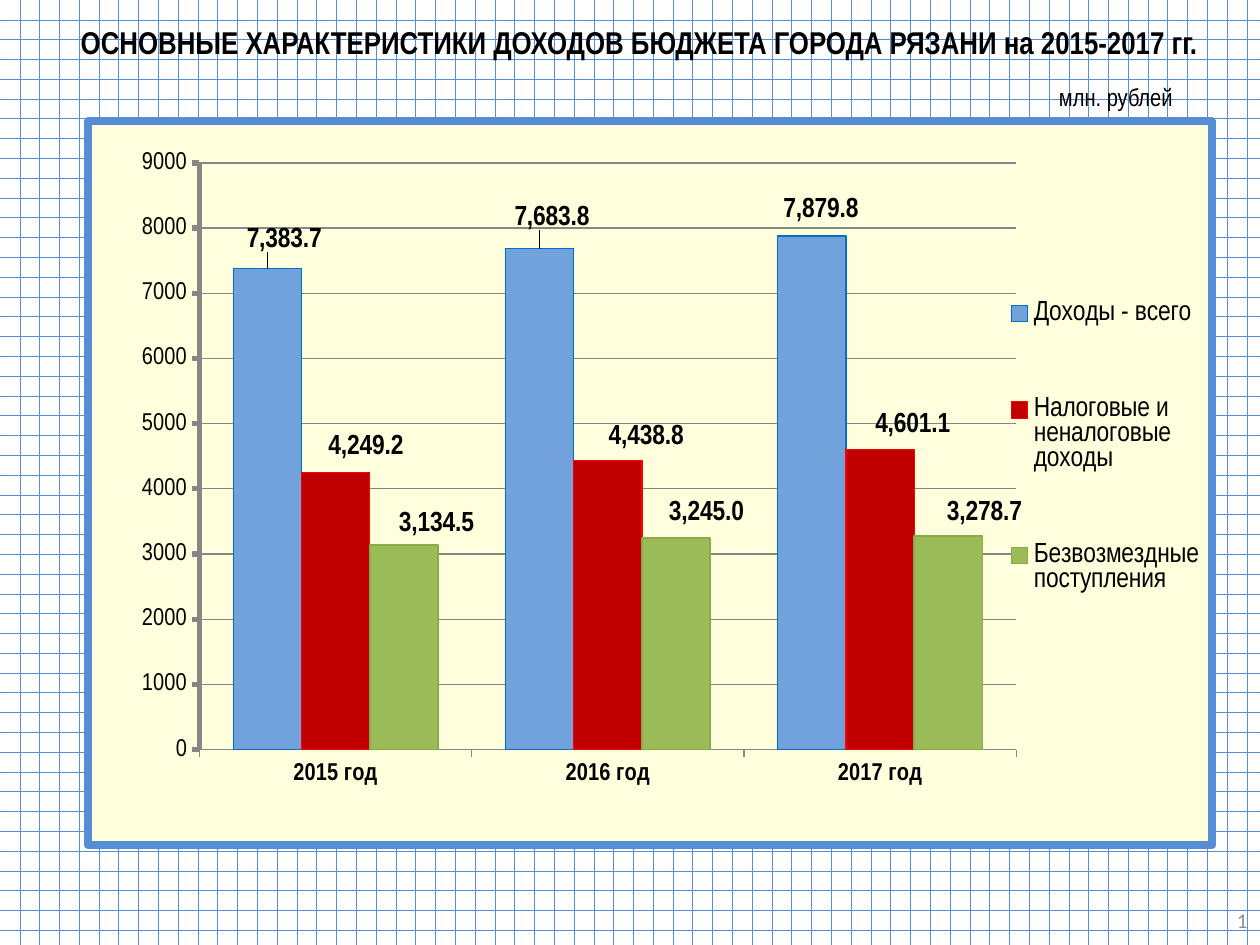
from lxml.etree import SubElement
from pptx import Presentation
from pptx.chart.data import CategoryChartData
from pptx.dml.color import RGBColor
from pptx.enum.chart import XL_CHART_TYPE, XL_LABEL_POSITION, XL_LEGEND_POSITION, XL_TICK_MARK
from pptx.enum.dml import MSO_PATTERN
from pptx.enum.text import MSO_ANCHOR, PP_ALIGN
from pptx.oxml import parse_xml
from pptx.oxml.ns import nsdecls, qn
from pptx.util import Cm, Pt

COLORS = {
    "black": "000000", "white": "FFFFFF", "grid": "558ED5", "cream": "FFFFDD",
    "axis": "868686", "number": "8C8C8C",
}
NARROW = "Arial Narrow"
YEARS = ["2015 год", "2016 год", "2017 год"]
LABEL_FORMAT = "#,##0.0"
# name, values, fill, outline, outline width, label shifts as chart fractions
SERIES = [
    ("Доходы - всего", (7383.7, 7683.8, 7879.8), "72A2DC", "0070C0", 0.75,
     ((0.015, -0.015), (0.011, -0.018), (0.008, -0.011))),
    ("Налоговые и неналоговые доходы", (4249.2, 4438.8, 4601.1), "C00000", "FF0000", 0.75,
     ((0.027, -0.011), (0.034, -0.008), (0.029, -0.01))),
    ("Безвозмездные поступления", (3134.5, 3245.0, 3278.7), "9BBB59", "8AAC46", 1,
     ((0.029, -0.005), (0.027, -0.011), (0.032, -0.007))),
]


def rgb(name):
    return RGBColor.from_string(COLORS.get(name, name))


def format_font(font, size, color="black", bold=False, name=NARROW):
    values = {"size": Pt(size), "bold": bold, "name": name}
    for key, value in values.items():
        setattr(font, key, value)
    font.color.rgb = rgb(color)


def format_line(line, color, width):
    line.color.rgb = rgb(color)
    line.width = Pt(width)


def prepare_frame(box, align):
    """Format the text frame of a box and return its first paragraph."""
    frame = box.text_frame
    values = {"word_wrap": True, "vertical_anchor": MSO_ANCHOR.MIDDLE,
              "margin_top": 0, "margin_bottom": 0}
    for key, value in values.items():
        setattr(frame, key, value)
    para = frame.paragraphs[0]
    para.alignment = align
    return para


def add_title(page, text):
    title = page.shapes.title
    place = {"left": Cm(0.89), "top": Cm(0.13), "width": Cm(24), "height": Cm(1.42)}
    for key, value in place.items():
        setattr(title, key, value)
    span = prepare_frame(title, PP_ALIGN.CENTER).add_run()
    span.text = text
    format_font(span.font, 18, bold=True)


def add_unit(page, text):
    box = page.shapes.add_textbox(Cm(20.5), Cm(1.65), Cm(3.99), Cm(0.61))
    span = prepare_frame(box, PP_ALIGN.CENTER).add_run()
    span.text = text
    format_font(span.font, 14)


def add_page_number(page):
    box = page.shapes.add_textbox(Cm(23.9), Cm(18.06), Cm(1.5), Cm(0.99))
    para = prepare_frame(box, PP_ALIGN.RIGHT)
    para._p.append(parse_xml(
        f'<a:fld {nsdecls("a")} id="{{B6F15528-21DE-4FAA-801E-634DDDAF4B2B}}" type="slidenum">'
        f'<a:rPr lang="ru-RU" sz="1200"><a:solidFill><a:srgbClr val="{COLORS["number"]}"/>'
        '</a:solidFill><a:latin typeface="Calibri"/></a:rPr><a:t>1</a:t></a:fld>'))


def set_layout(parent, index, **values):
    """Replace the manual layout of a chart part."""
    for old in parent.findall(qn("c:layout")):
        parent.remove(old)
    layout = parse_xml(f'<c:layout {nsdecls("c")}/>')
    manual = SubElement(layout, qn("c:manualLayout"))
    for key, value in values.items():
        SubElement(manual, qn(f"c:{key}")).set("val", str(value))
    parent.insert(index, layout)


def fill_chart_area(chart):
    chart._chartSpace.find(qn("c:chart")).addnext(parse_xml(
        f'<c:spPr {nsdecls("c", "a")}><a:solidFill><a:srgbClr val="{COLORS["cream"]}"/>'
        f'</a:solidFill><a:ln w="{Pt(4.5)}"><a:solidFill><a:srgbClr val="{COLORS["grid"]}"/>'
        '</a:solidFill><a:round/></a:ln></c:spPr>'))


def format_axes(chart):
    for axis, bold, width in ((chart.category_axis, True, 0.75), (chart.value_axis, False, 3)):
        axis.major_tick_mark = XL_TICK_MARK.OUTSIDE
        axis.minor_tick_mark = XL_TICK_MARK.NONE
        format_font(axis.tick_labels.font, 14, bold=bold)
        format_line(axis.format.line, "axis", width)
    scale = {"minimum_scale": 0, "maximum_scale": 9000, "major_unit": 1000,
             "has_major_gridlines": True}
    for key, value in scale.items():
        setattr(chart.value_axis, key, value)
    labels = chart.value_axis.tick_labels
    labels.number_format = "0"
    labels.number_format_is_linked = False
    format_line(chart.value_axis.major_gridlines.format.line, "axis", 0.75)


def format_labels(series, shifts):
    labels = series.data_labels
    values = {"show_value": True, "number_format": LABEL_FORMAT,
              "number_format_is_linked": False, "position": XL_LABEL_POSITION.OUTSIDE_END}
    for key, value in values.items():
        setattr(labels, key, value)
    format_font(labels.font, 16, bold=True)
    for index in range(len(shifts)):
        label = series.points[index].data_label
        format_font(label.font, 16, bold=True)
        label.position = XL_LABEL_POSITION.OUTSIDE_END
    for element, (x, y) in zip(series._element.findall(f'{qn("c:dLbls")}/{qn("c:dLbl")}'), shifts):
        set_layout(element, 1, x=x, y=y)
        element.insert(2, parse_xml(
            f'<c:numFmt {nsdecls("c")} formatCode="{LABEL_FORMAT}" sourceLinked="0"/>'))


def add_income_chart(page):
    data = CategoryChartData(number_format=LABEL_FORMAT)
    data.categories = YEARS
    for name, values, *_ in SERIES:
        data.add_series(name, values)
    chart = page.shapes.add_chart(XL_CHART_TYPE.COLUMN_CLUSTERED, Cm(1.7), Cm(2.36),
                                  Cm(22.81), Cm(14.76), data).chart
    chart.has_title = False
    format_font(chart.font, 18, name="Calibri")
    fill_chart_area(chart)
    format_axes(chart)

    plot = chart.plots[0]
    plot.gap_width = 99
    plot.overlap = 0
    plot.vary_by_categories = False
    for series, (_, _, fill, outline, width, shifts) in zip(plot.series, SERIES):
        series.format.fill.solid()
        series.format.fill.fore_color.rgb = rgb(fill)
        format_line(series.format.line, outline, width)
        format_labels(series, shifts)
    set_layout(chart._chartSpace.chart.plotArea, 0, layoutTarget="inner", xMode="edge",
               yMode="edge", x=0.099, y=0.058, w=0.727, h=0.81)

    chart.has_legend = True
    chart.legend.position = XL_LEGEND_POSITION.RIGHT
    chart.legend.include_in_layout = False
    format_font(chart.legend.font, 16)
    set_layout(chart.legend._element, 1, xMode="edge", yMode="edge",
               x=0.81, y=0.15, w=0.19, h=0.6)


def main():
    deck = Presentation()
    deck.slide_width, deck.slide_height = Cm(25.4), Cm(19.05)
    page = deck.slides.add_slide(deck.slide_layouts[5])
    fill = page.background.fill
    fill.patterned()
    fill.pattern = MSO_PATTERN.DOTTED_GRID
    fill.fore_color.rgb = rgb("grid")
    fill.back_color.rgb = rgb("white")
    add_title(page, "ОСНОВНЫЕ ХАРАКТЕРИСТИКИ ДОХОДОВ БЮДЖЕТА ГОРОДА РЯЗАНИ на 2015-2017 гг.")
    add_income_chart(page)
    add_unit(page, "млн. рублей")
    add_page_number(page)
    deck.save("out.pptx")


if __name__ == "__main__":
    main()
